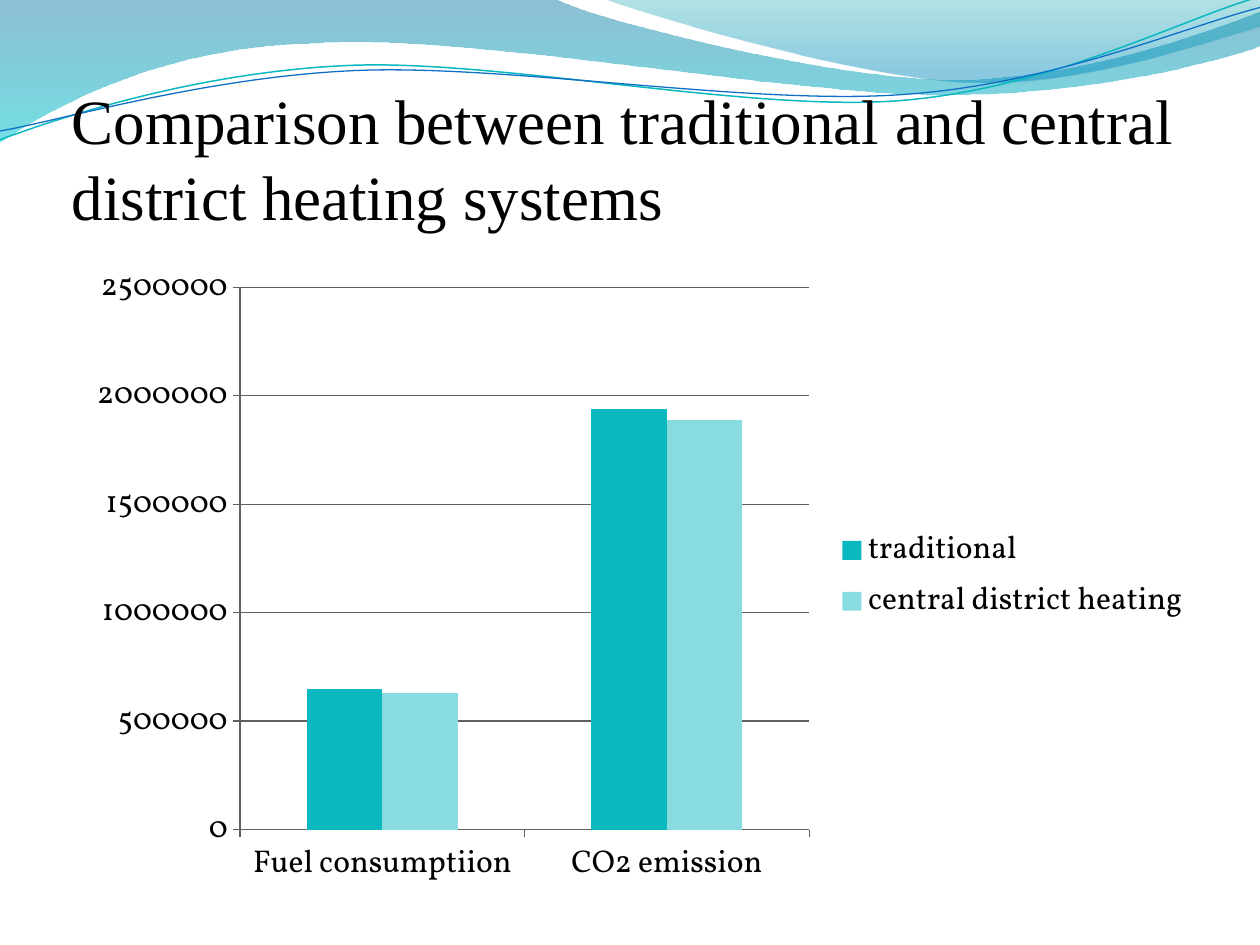
import math
from dataclasses import dataclass
from typing import Optional

import lxml.etree
import pptx
import pptx.chart.data
import pptx.dml.color
import pptx.enum.chart
import pptx.enum.text
import pptx.oxml.ns
import pptx.util

Inches = pptx.util.Inches
Pt = pptx.util.Pt
qn = pptx.oxml.ns.qn


@dataclass(frozen=True)
class Theme:
    ink: str = "000000"
    axis: str = "5F5F5F"
    teal: str = "0AB8BF"
    pale_teal: str = "88DCE0"
    blue: str = "0F6FC6"
    title_font: str = "Times New Roman"
    chart_font: str = "Vollkorn"
    title_size: float = 36
    chart_size: float = 18
    axis_width: float = 0.75


@dataclass(frozen=True)
class Stop:
    position: float
    color: str
    alpha: int


@dataclass(frozen=True)
class Wave:
    start: tuple
    segments: tuple
    stops: tuple = ()
    color: Optional[str] = None
    width: float = 0
    tilt: float = 0
    center: tuple = (5, 0.58)


@dataclass(frozen=True)
class Series:
    name: str
    values: tuple
    color: str


THEME = Theme()

WAVES = (
    Wave((-0.01, -0.01), (
        (4.4, -0.01),
        (4.76, 0.17, 6.64, 0.63, 7.58, 0.63),
        (8.53, 0.63, 9.58, 0.26, 10, 0.09),
        (10.01, 0.36),
        (9.83, 0.44, 8.7, 0.76, 7.46, 0.75),
        (6.22, 0.75, 3.82, 0.28, 2.57, 0.34),
        (1.29, 0.36, 0.46, 0.83, -0.01, 1.13),
    ), stops=(Stop(0, "0074A1", 45), Stop(1, "00C6CF", 55))),
    Wave((4.79, -0.01), (
        (5.09, 0.11, 6.82, 0.62, 7.69, 0.65),
        (8.56, 0.69, 9.61, 0.32, 10, 0.21),
        (10, -0.01),
    ), stops=(Stop(0, "00A1A9", 30), Stop(0.8, "008BBF", 45))),
    Wave((0, 1.11), (
        (0.48, 0.93, 1.58, 0.57, 2.77, 0.52),
        (3.95, 0.47, 5.93, 0.89, 7.13, 0.8),
        (8.33, 0.71, 9.38, 0.15, 9.98, -0.02),
    ), color=THEME.teal, width=0.85, tilt=-2.7),
    Wave((0, 1.04), (
        (0.47, 0.96, 1.64, 0.61, 2.83, 0.56),
        (4.03, 0.51, 5.97, 0.84, 7.17, 0.75),
        (8.36, 0.67, 9.41, 0.21, 10, 0.06),
    ), color=THEME.blue, width=0.75, tilt=-2.7),
)

CATEGORIES = ("Fuel consumptiion", "CO2 emission")
SERIES = (
    Series("traditional ", (650000, 1940000), THEME.teal),
    Series("central district heating  ", (630000, 1890000), THEME.pale_teal),
)


def rgb(value: str) -> pptx.dml.color.RGBColor:
    return pptx.dml.color.RGBColor.from_string(value)


def level(x: float, y: float, wave: Wave) -> tuple:
    angle = math.radians(-wave.tilt)
    cx, cy = wave.center
    dx, dy = x - cx, y - cy
    return (Inches(cx + dx * math.cos(angle) - dy * math.sin(angle)),
            Inches(cy + dx * math.sin(angle) + dy * math.cos(angle)))


def bend(sp, wave: Wave) -> None:
    lines = iter(list(sp._element.iter(qn("a:lnTo"))))
    for segment in wave.segments:
        group = [next(lines) for _ in range(len(segment) // 2)]
        if len(group) == 1:
            continue
        curve = lxml.etree.Element(qn("a:cubicBezTo"))
        group[0].addprevious(curve)
        for line in group:
            curve.append(line[0])
            line.getparent().remove(line)


def add_wave(s, wave: Wave) -> None:
    points = [level(seg[i], seg[i + 1], wave)
              for seg in (wave.start, *wave.segments) for i in range(0, len(seg), 2)]
    builder = s.shapes.build_freeform(*points[0], scale=1.0)
    builder.add_line_segments(points[1:], close=bool(wave.stops))
    sp = builder.convert_to_shape()
    bend(sp, wave)
    sp.rotation = wave.tilt
    sp.shadow.inherit = False
    if not wave.stops:
        sp.fill.background()
        sp.line.color.rgb = rgb(wave.color)
        sp.line.width = Pt(wave.width)
        return
    sp.line.fill.background()
    sp.fill.gradient()
    sp.fill.gradient_angle = 270
    for target, stop in zip(sp.fill.gradient_stops, wave.stops):
        target.color.rgb = rgb(stop.color)
        target.position = stop.position
    colors = list(sp._element.iter(qn("a:srgbClr")))
    for color, stop in zip(colors, wave.stops):
        lxml.etree.SubElement(color, qn("a:alpha")).set("val", str(stop.alpha * 1000))


def add_text(s, text: str, *, left: float, top: float, width: float, height: float,
             font: str, size: float, color: str) -> None:
    sp = s.shapes.add_textbox(Inches(left), Inches(top), Inches(width), Inches(height))
    tf = sp.text_frame
    tf.word_wrap = True
    tf.vertical_anchor = pptx.enum.text.MSO_ANCHOR.BOTTOM
    tf.margin_left = tf.margin_right = tf.margin_bottom = 0
    tf.margin_top = Inches(0.05)
    r = tf.paragraphs[0].add_run()
    r.text = text
    r.font.name = font
    r.font.size = Pt(size)
    r.font.color.rgb = rgb(color)


def style_line(line) -> None:
    line.color.rgb = rgb(THEME.axis)
    line.width = Pt(THEME.axis_width)


def add_heating_chart(s) -> None:
    data = pptx.chart.data.CategoryChartData()
    data.categories = CATEGORIES
    for series in SERIES:
        data.add_series(series.name, series.values)
    chart = s.shapes.add_chart(
        pptx.enum.chart.XL_CHART_TYPE.COLUMN_CLUSTERED,
        Inches(0.59), Inches(2), Inches(9.06), Inches(5.14), data).chart
    chart.has_title = False
    chart.font.name = THEME.chart_font
    chart.font.size = Pt(THEME.chart_size)
    chart.font.color.rgb = rgb(THEME.ink)
    chart.has_legend = True
    chart.legend.position = pptx.enum.chart.XL_LEGEND_POSITION.RIGHT
    chart.legend.include_in_layout = False
    for axis in (chart.category_axis, chart.value_axis):
        axis.major_tick_mark = pptx.enum.chart.XL_TICK_MARK.OUTSIDE
        style_line(axis.format.line)
    chart.value_axis.has_major_gridlines = True
    style_line(chart.value_axis.major_gridlines.format.line)
    plot = chart.plots[0]
    plot.gap_width = 177
    plot.overlap = 0
    plot.vary_by_categories = False
    for bars, series in zip(plot.series, SERIES):
        bars.format.fill.solid()
        bars.format.fill.fore_color.rgb = rgb(series.color)


def main() -> None:
    prs = pptx.Presentation()
    prs.slide_width = Inches(10)
    prs.slide_height = Inches(7.5)
    s = prs.slides.add_slide(prs.slide_layouts[6])
    for wave in WAVES:
        add_wave(s, wave)
    add_text(s, "Comparison between traditional and central district heating systems",
             left=0.57, top=0.6, width=9, height=1.25, font=THEME.title_font,
             size=THEME.title_size, color=THEME.ink)
    add_heating_chart(s)
    prs.save("out.pptx")


if __name__ == "__main__":
    main()
